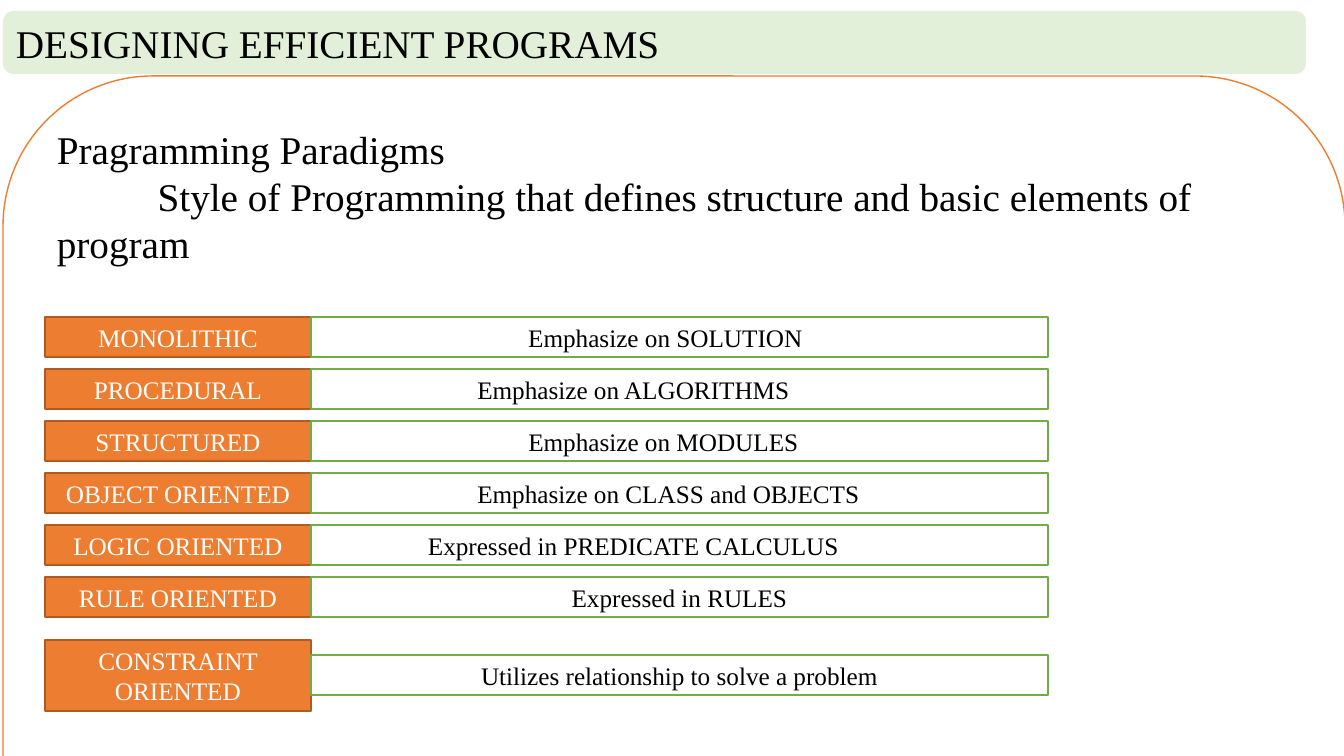
from dataclasses import dataclass

from pptx import Presentation
from pptx import util as u
from pptx.dml.color import RGBColor
from pptx.enum import shapes, text

PX = 9071  # EMU per px
SLIDE_WIDTH, SLIDE_HEIGHT = 1344, 756


@dataclass(frozen=True)
class Theme:
    font: str = "Times New Roman"
    heading: int = 28
    body: int = 18
    dark: str = "000000"
    light: str = "FFFFFF"
    banner: str = "E2F0D9"
    accent: str = "ED7D31"
    accent_edge: str = "AF5C24"
    description_edge: str = "70AD47"


THEME = Theme()
ROUNDED = shapes.MSO_SHAPE.FLOWCHART_ALTERNATE_PROCESS
RECTANGLE = shapes.MSO_SHAPE.RECTANGLE
LEFT, CENTER = text.PP_ALIGN.LEFT, text.PP_ALIGN.CENTER
TOP, MIDDLE = text.MSO_ANCHOR.TOP, text.MSO_ANCHOR.MIDDLE

# Label, description, and how far the description sits left of centre in px
PARADIGMS = [
    ("MONOLITHIC", "Emphasize on SOLUTION", 14),
    ("PROCEDURAL", "Emphasize on ALGORITHMS", 46),
    ("STRUCTURED", "Emphasize on MODULES", 16),
    ("OBJECT ORIENTED", "Emphasize on CLASS and OBJECTS", 11),
    ("LOGIC ORIENTED", "Expressed in PREDICATE CALCULUS", 46),
    ("RULE ORIENTED", "Expressed in RULES", 0),
]
LAST_PARADIGM = ("CONSTRAINT ORIENTED", "Utilizes relationship to solve a problem", 0)


def add_box(slide, kind, box, fill, edge=None):
    shape = slide.shapes.add_shape(kind, *(length * PX for length in box))
    shape.shadow.inherit = False
    shape.fill.solid()
    shape.fill.fore_color.rgb = RGBColor.from_string(fill)
    if edge:
        shape.line.color.rgb = RGBColor.from_string(edge)
        shape.line.width = u.Pt(1)
    else:
        shape.line.fill.background()
    return shape


def write(shape, lines, size, color, align, anchor=MIDDLE, shift=0):
    """Fill the shape with one paragraph per line; shift moves centred text left."""
    frame = shape.text_frame
    frame_format = {
        "text": "\n".join(lines),
        "word_wrap": True,
        "vertical_anchor": anchor,
        "margin_right": frame.margin_right + 2 * shift * PX,
    }
    for name, value in frame_format.items():
        setattr(frame, name, value)
    for paragraph in frame.paragraphs:
        paragraph.alignment = align
        for run in paragraph.runs:
            for name, value in {"name": THEME.font, "size": u.Pt(size)}.items():
                setattr(run.font, name, value)
            run.font.color.rgb = RGBColor.from_string(color)


def add_banner(slide, box):
    shape = add_box(slide, ROUNDED, box, THEME.banner)
    write(shape, ["DESIGNING EFFICIENT PROGRAMS"], THEME.heading, THEME.dark, LEFT)


def add_definition_panel(slide, box):
    shape = add_box(slide, ROUNDED, box, THEME.light, THEME.accent)
    lines = [
        "Pragramming Paradigms",
        "Style of Programming that defines structure and basic elements of program",
    ]
    write(shape, lines, THEME.heading, THEME.dark, LEFT, TOP)
    definition = shape.text_frame.paragraphs[1]
    properties = definition._p.get_or_add_pPr()
    properties.set("marL", "0")
    properties.set("indent", str(u.Inches(1)))


def add_paradigm(slide, box, paradigm, description_height=40):
    """Place a label and, centred on its height, the description beside it."""
    left, top, width, height = box
    label, description, shift = paradigm
    label_width = 266
    label_box = add_box(slide, RECTANGLE, (left, top, label_width, height),
                        THEME.accent, THEME.accent_edge)
    write(label_box, [label], THEME.body, THEME.light, CENTER)
    description_top = top + (height - description_height) // 2
    description_box = add_box(
        slide, RECTANGLE,
        (left + label_width, description_top, width - label_width, description_height),
        THEME.light, THEME.description_edge)
    write(description_box, [description], THEME.body, THEME.dark, CENTER, shift=shift)


def add_paradigm_list(slide, box):
    left, top, width, height = box
    row_height, pitch, last_height = 40, 52, 71
    for index, paradigm in enumerate(PARADIGMS):
        add_paradigm(slide, (left, top + index * pitch, width, row_height), paradigm)
    last_top = top + height - last_height
    add_paradigm(slide, (left, last_top, width, last_height), LAST_PARADIGM)


def main():
    presentation = Presentation()
    presentation.slide_width = SLIDE_WIDTH * PX
    presentation.slide_height = SLIDE_HEIGHT * PX
    slide = presentation.slides.add_slide(presentation.slide_layouts[6])
    add_banner(slide, (3, 11, 1303, 63))
    add_definition_panel(slide, (3, 76, 1342, 900))
    add_paradigm_list(slide, (45, 317, 1003, 394))
    presentation.save("out.pptx")


if __name__ == "__main__":
    main()
